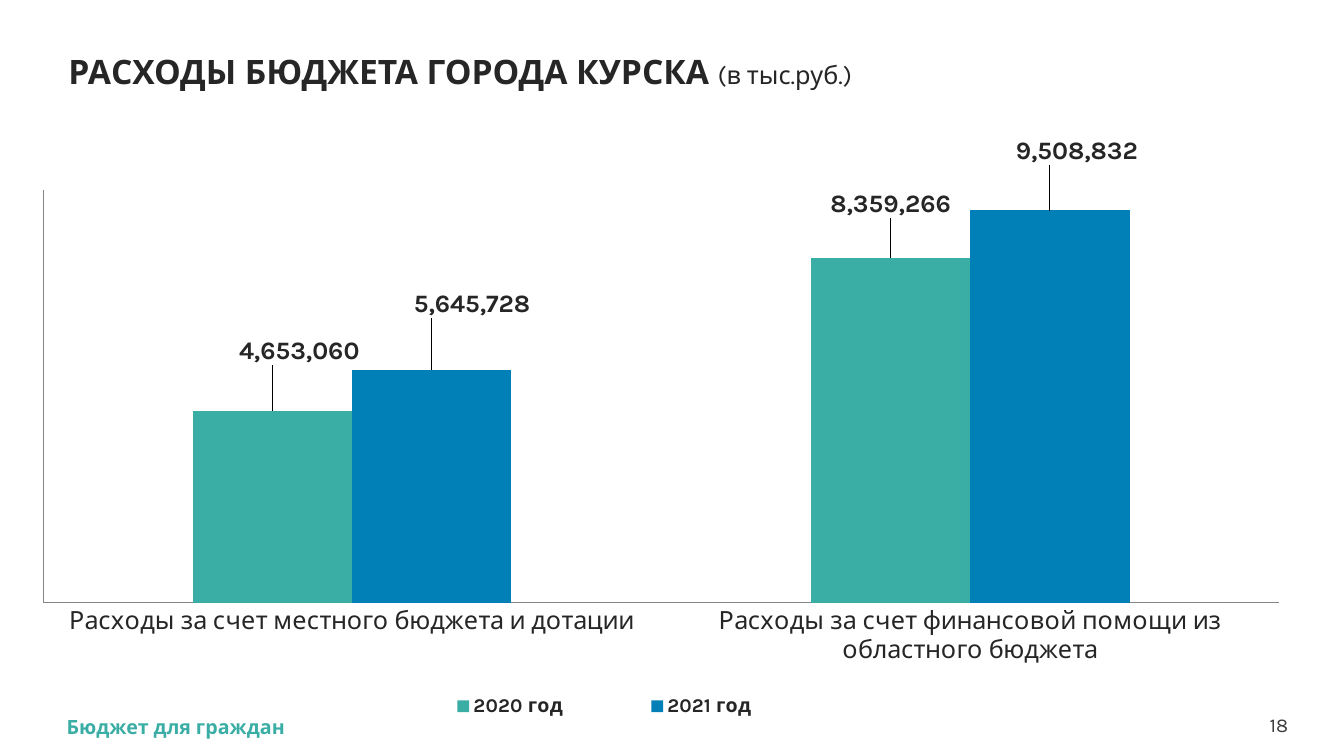
from lxml import etree
from pptx import Presentation
from pptx.chart.data import CategoryChartData
from pptx.dml.color import RGBColor
from pptx.enum.chart import (XL_CHART_TYPE, XL_LABEL_POSITION,
                             XL_LEGEND_POSITION, XL_TICK_LABEL_POSITION,
                             XL_TICK_MARK)
from pptx.enum.text import MSO_ANCHOR, PP_ALIGN
from pptx.oxml.ns import qn
from pptx.util import Pt

FONT = "Karla"
DARK = RGBColor(0x26, 0x26, 0x26)
GREY = RGBColor(0x3C, 0x3C, 0x3C)
AXIS = RGBColor(0x86, 0x86, 0x86)
TEAL = RGBColor(0x3A, 0xAD, 0xA5)
BLUE = RGBColor(0x00, 0x80, 0xB6)

CATEGORIES = ["Расходы за счет местного бюджета и дотации",
              "Расходы за счет финансовой помощи из областного бюджета"]
# Name, colour, values, label shifts as fractions of the chart
SERIES = [
    ("2020 год", TEAL, (4653060, 8359266), ((0.02, -0.07), (0, -0.06))),
    ("2021 год", BLUE, (5645728, 9508832), ((0.03, -0.08), (0.02, -0.07))),
]


def style_font(font, size, color=DARK, bold=False):
    font.name = FONT
    font.size = Pt(size)
    font.bold = bold
    font.color.rgb = color


def add_text(page, spans, left, top, width, height, inset=0,
             align=PP_ALIGN.LEFT, anchor=MSO_ANCHOR.MIDDLE, spacing=1.0):
    """Add one paragraph; each span is (text, size, color, bold)."""
    box = page.shapes.add_textbox(Pt(left), Pt(top), Pt(width), Pt(height))
    frame = box.text_frame
    frame.word_wrap = True
    frame.vertical_anchor = anchor
    frame.margin_left = frame.margin_right = Pt(inset)
    frame.margin_top = frame.margin_bottom = Pt(inset / 2)
    para = frame.paragraphs[0]
    para.alignment = align
    para.line_spacing = spacing
    for text, size, color, bold in spans:
        span = para.add_run()
        span.text = text
        style_font(span.font, size, color, bold)


def make_layout(**settings):
    """Build a manual chart layout from its settings, in schema order."""
    layout = etree.Element(qn("c:layout"))
    manual = etree.SubElement(layout, qn("c:manualLayout"))
    for name, value in settings.items():
        etree.SubElement(manual, qn("c:" + name)).set("val", str(value))
    return layout


def place_plot(chart):
    plot_area = chart._chartSpace.chart.plotArea
    for old in plot_area.findall(qn("c:layout")):
        plot_area.remove(old)
    plot_area.insert(0, make_layout(layoutTarget="inner", xMode="edge",
                                    yMode="edge", x=0.032, y=0.087,
                                    w=0.92, h=0.706))


def style_axes(chart):
    for axis in (chart.category_axis, chart.value_axis):
        axis.major_tick_mark = axis.minor_tick_mark = XL_TICK_MARK.NONE
        axis.has_major_gridlines = False
        axis.format.line.color.rgb = AXIS
        axis.format.line.width = Pt(0.75)
    style_font(chart.category_axis.tick_labels.font, 18)
    chart.value_axis.tick_label_position = XL_TICK_LABEL_POSITION.NONE
    chart.value_axis.minimum_scale = 0
    chart.value_axis.maximum_scale = 10000000


def style_series(series, color, shifts):
    series.format.fill.solid()
    series.format.fill.fore_color.rgb = color
    labels = series.data_labels
    labels.show_value = True
    labels.number_format = "#,##0"
    labels.number_format_is_linked = False
    style_font(labels.font, 18, bold=True)
    for index, (x, y) in enumerate(shifts):
        label = series.points[index].data_label
        style_font(label.font, 18, bold=True)
        label.position = XL_LABEL_POSITION.OUTSIDE_END
        element = series._element.xpath(f".//c:dLbl[c:idx/@val='{index}']")[0]
        element.insert(1, make_layout(x=x, y=y))


def add_legend(chart):
    chart.has_legend = True
    legend = chart.legend
    legend.position = XL_LEGEND_POSITION.BOTTOM
    legend.include_in_layout = False
    style_font(legend.font, 14, bold=True)
    for old in legend._element.findall(qn("c:layout")):
        legend._element.remove(old)
    legend._element.find(qn("c:legendPos")).addnext(
        make_layout(xMode="edge", yMode="edge", x=0.28, y=0.94, w=0.34, h=0.06))


def add_spending_chart(page):
    data = CategoryChartData(number_format="#,##0")
    data.categories = CATEGORIES
    for name, _, values, _ in SERIES:
        data.add_series(name, values)
    chart = page.shapes.add_chart(XL_CHART_TYPE.COLUMN_CLUSTERED, Pt(0),
                                  Pt(97.2), Pt(960), Pt(419.8), data).chart
    chart.has_title = False
    style_font(chart.font, 18)
    plot = chart.plots[0]
    plot.gap_width = 188
    plot.overlap = 0
    plot.vary_by_categories = False
    for series, (_, color, _, shifts) in zip(plot.series, SERIES):
        style_series(series, color, shifts)
    style_axes(chart)
    place_plot(chart)
    add_legend(chart)


def main():
    deck = Presentation()
    deck.slide_width, deck.slide_height = Pt(960), Pt(540)
    page = deck.slides.add_slide(deck.slide_layouts[6])

    # Title
    add_text(page, [("РАСХОДЫ БЮДЖЕТА ГОРОДА КУРСКА ", 24, DARK, True),
                    ("(в тыс.руб.)", 18, DARK, False)],
             41.8, 25.2, 855.4, 54.7, inset=7.2, spacing=0.9)

    # Chart
    add_spending_chart(page)

    # Footer and page number
    add_text(page, [("Бюджет для граждан", 14, TEAL, True)],
             47.5, 510.5, 855, 17.3, anchor=MSO_ANCHOR.TOP)
    add_text(page, [("18", 14, GREY, False)],
             902.2, 509, 18, 17.3, align=PP_ALIGN.RIGHT)

    deck.save("out.pptx")


if __name__ == "__main__":
    main()
